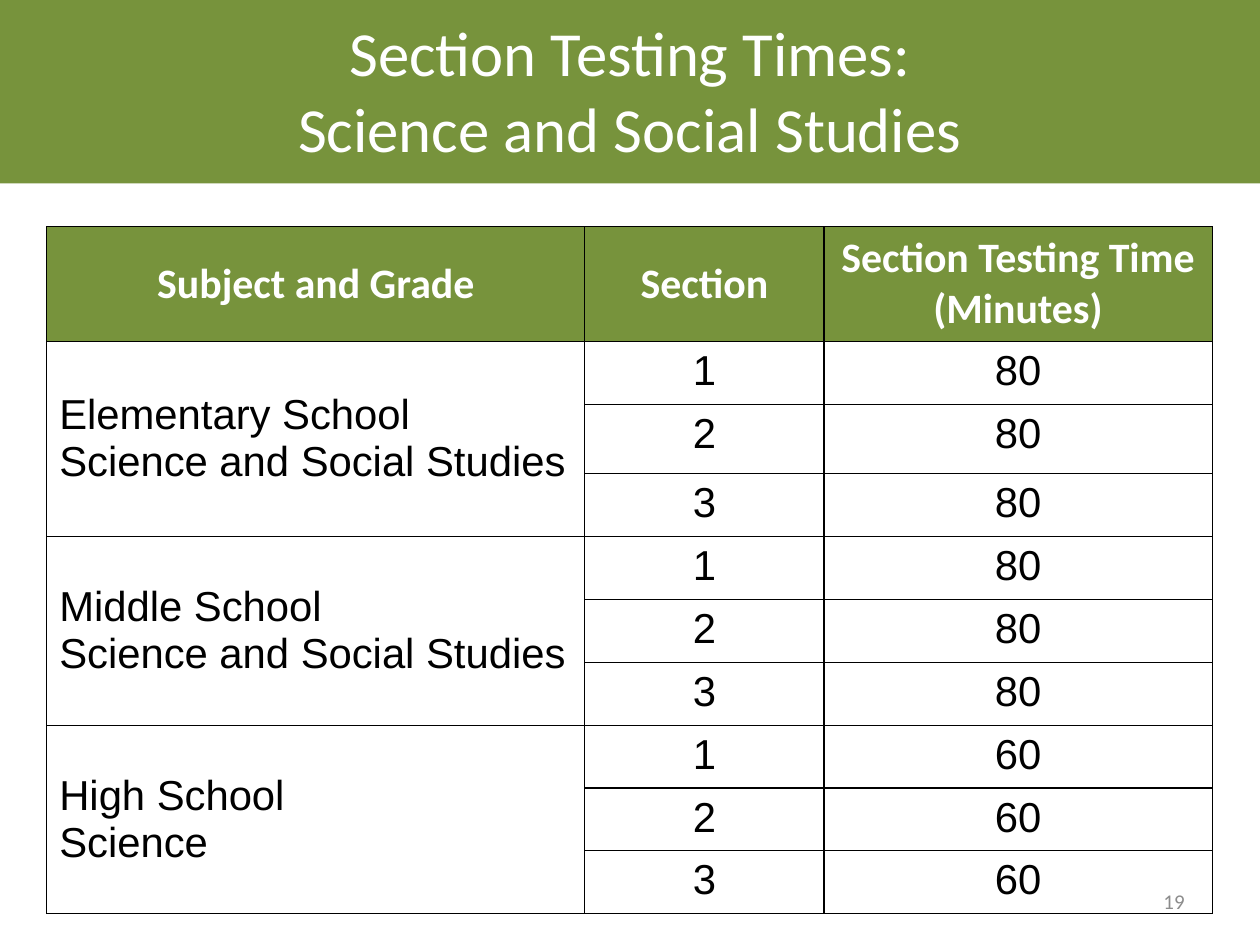
from dataclasses import dataclass

import lxml.etree
import pptx
import pptx.dml.color
import pptx.enum.shapes
import pptx.enum.text
import pptx.oxml.ns
import pptx.slide
import pptx.table
import pptx.text.text
import pptx.util

Inches = pptx.util.Inches
Align = pptx.enum.text.PP_ALIGN
Anchor = pptx.enum.text.MSO_ANCHOR


@dataclass(frozen=True)
class Theme:
    green: str = "77933C"
    white: str = "FFFFFF"
    black: str = "000000"
    gray: str = "8C8C8C"
    heading_font: str = "Calibri"
    body_font: str = "Arial"
    title_size: int = 51
    table_size: int = 34
    number_size: int = 17
    border_width: int = 1


@dataclass(frozen=True)
class TextStyle:
    font: str
    size: int
    color: str
    align: Align
    anchor: Anchor = Anchor.MIDDLE
    bold: bool = False


@dataclass(frozen=True)
class SchoolGroup:
    label: str
    minutes: tuple[int, ...]


THEME = Theme()
TITLE = TextStyle(THEME.heading_font, THEME.title_size, THEME.white, Align.CENTER)
NUMBER = TextStyle(THEME.heading_font, THEME.number_size, THEME.gray, Align.RIGHT)
HEADER = TextStyle(THEME.heading_font, THEME.table_size, THEME.white, Align.CENTER, bold=True)
LABEL = TextStyle(THEME.body_font, THEME.table_size, THEME.black, Align.LEFT)
VALUE = TextStyle(THEME.body_font, THEME.table_size, THEME.black, Align.CENTER, Anchor.TOP)

HEADINGS = ("Subject and Grade", "Section", "Section Testing Time (Minutes)")
GROUPS = (
    SchoolGroup("Elementary School\nScience and Social Studies", (80, 80, 80)),
    SchoolGroup("Middle School\nScience and Social Studies", (80, 80, 80)),
    SchoolGroup("High School\nScience", (60, 60, 60)),
)
COLUMN_WIDTHS = (6.07, 2.7, 4.38)
ROW_HEIGHTS = (1.28, 0.71, 0.78) + (0.71,) * 7
MARGINS = {
    "margin_left": Inches(0.14), "margin_right": Inches(0.14),
    "margin_top": Inches(0.07), "margin_bottom": Inches(0.07),
}


def rgb(color: str) -> pptx.dml.color.RGBColor:
    return pptx.dml.color.RGBColor.from_string(color)


def set_attributes(target: object, values: dict[str, object]) -> None:
    for name, value in values.items():
        setattr(target, name, value)


def write_text(frame: pptx.text.text.TextFrame, text: str, style: TextStyle) -> None:
    frame.text = text
    for paragraph in frame.paragraphs:
        paragraph.alignment = style.align
        for run in paragraph.runs:
            set_attributes(run.font, {
                "name": style.font, "size": pptx.util.Pt(style.size), "bold": style.bold,
            })
            run.font.color.rgb = rgb(style.color)


def format_frame(frame: pptx.text.text.TextFrame, style: TextStyle) -> None:
    set_attributes(frame, MARGINS | {
        "word_wrap": True,
        "auto_size": pptx.enum.text.MSO_AUTO_SIZE.NONE,
        "vertical_anchor": style.anchor,
    })


def add_borders(cell: pptx.table._Cell) -> None:
    properties = cell._tc.get_or_add_tcPr()
    qualified = pptx.oxml.ns.qn
    for index, side in enumerate(("a:lnL", "a:lnR", "a:lnT", "a:lnB")):
        line = lxml.etree.Element(qualified(side), w=str(pptx.util.Pt(THEME.border_width)))
        fill = lxml.etree.SubElement(line, qualified("a:solidFill"))
        lxml.etree.SubElement(fill, qualified("a:srgbClr"), val=THEME.black)
        properties.insert(index, line)


def fill_cell(cell: pptx.table._Cell, text: str, style: TextStyle) -> None:
    write_text(cell.text_frame, text, style)
    set_attributes(cell, MARGINS | {"vertical_anchor": style.anchor})


def add_title(slide: pptx.slide.Slide) -> None:
    band = slide.shapes.add_shape(
        pptx.enum.shapes.MSO_SHAPE.RECTANGLE, 0, Inches(-0.06), Inches(14.22), Inches(2.13))
    band.shadow.inherit = False
    band.fill.solid()
    band.fill.fore_color.rgb = rgb(THEME.green)
    band.line.fill.background()
    title = slide.shapes.title
    title._element.addprevious(band._element)
    set_attributes(title, {
        "left": Inches(0.71), "top": Inches(0.12),
        "width": Inches(12.8), "height": Inches(1.78),
    })
    format_frame(title.text_frame, TITLE)
    write_text(title.text_frame, "Section Testing Times:\vScience and Social Studies", TITLE)


def add_slide_number(slide: pptx.slide.Slide) -> None:
    box = slide.shapes.add_textbox(Inches(10.19), Inches(9.88), Inches(3.32), Inches(0.57))
    format_frame(box.text_frame, NUMBER)
    write_text(box.text_frame, "19", NUMBER)


def add_times_table(slide: pptx.slide.Slide) -> None:
    table = slide.shapes.add_table(
        len(ROW_HEIGHTS), len(COLUMN_WIDTHS), Inches(0.53), Inches(2.56),
        Inches(sum(COLUMN_WIDTHS)), Inches(sum(ROW_HEIGHTS))).table
    set_attributes(table, {"first_row": False, "horz_banding": False})
    for column, width in zip(table.columns, COLUMN_WIDTHS):
        column.width = Inches(width)
    for row, height in zip(table.rows, ROW_HEIGHTS):
        row.height = Inches(height)
    for cell in table.iter_cells():
        cell.fill.background()
        add_borders(cell)
    for column, heading in enumerate(HEADINGS):
        cell = table.cell(0, column)
        fill_cell(cell, heading, HEADER)
        cell.fill.solid()
        cell.fill.fore_color.rgb = rgb(THEME.green)
    first_row = 1
    for group in GROUPS:
        next_row = first_row + len(group.minutes)
        label_cell = table.cell(first_row, 0)
        label_cell.merge(table.cell(next_row - 1, 0))
        fill_cell(label_cell, group.label, LABEL)
        for section, minutes in enumerate(group.minutes, start=1):
            row = first_row + section - 1
            fill_cell(table.cell(row, 1), str(section), VALUE)
            fill_cell(table.cell(row, 2), str(minutes), VALUE)
        first_row = next_row


def main() -> None:
    presentation = pptx.Presentation()
    set_attributes(presentation, {"slide_width": Inches(14.22), "slide_height": Inches(10.66)})
    slide = presentation.slides.add_slide(presentation.slide_layouts[5])
    add_title(slide)
    add_slide_number(slide)
    add_times_table(slide)
    presentation.save("out.pptx")


if __name__ == "__main__":
    main()
